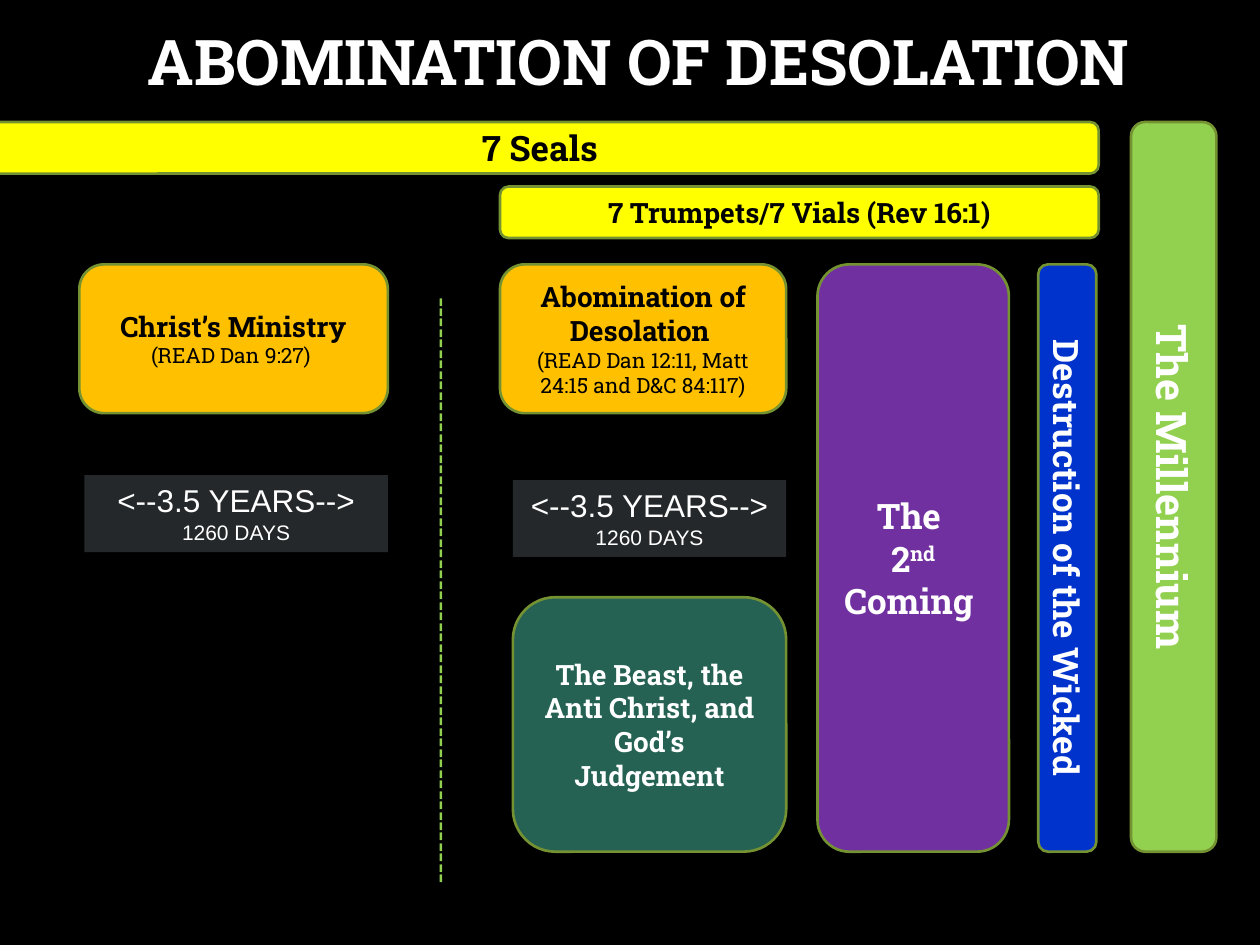
from dataclasses import dataclass
from lxml.etree import SubElement
from pptx import Presentation
from pptx.dml.color import RGBColor
from pptx.enum.shapes import MSO_SHAPE
from pptx.enum.text import MSO_ANCHOR, PP_ALIGN
from pptx.oxml.ns import qn
from pptx.util import Cm, Pt


@dataclass(frozen=True)
class Theme:
    slab: str = "Roboto Slab"
    sans: str = "Arial"
    black: str = "000000"
    white: str = "FFFFFF"
    yellow: str = "FFFF00"
    amber: str = "FFC000"
    lime: str = "92D050"
    violet: str = "7030A0"
    teal: str = "256253"
    blue: str = "0033CC"
    mist: str = "CCE0EE"
    edge: str = "759232"
    title: int = 36
    large: int = 24
    head: int = 20
    span: int = 18
    body: int = 16
    note: int = 12


T = Theme()
TITLE = "ABOMINATION OF DESOLATION"
RIGHT, ROW, FLOOR = 22.15, 5.33, 17.17
LATE, INNER, LATE_END = 10.08, 10.34, 15.85
BAR, CARD = 1.04, 3.0

# left, top, right, bottom, fill, ink, turned, runs (text, size, bold, raised)
BLOCKS = [
    (-0.38, 2.46, RIGHT, 2.46 + BAR, T.yellow, T.black, False,
     [("7 Seals", T.head, True, False)]),
    (LATE, 3.76, RIGHT, 3.76 + BAR, T.yellow, T.black, False,
     [("7 Trumpets/7 Vials (Rev 16:1)", T.body, True, False)]),
    (1.6, ROW, 7.82, ROW + CARD, T.amber, T.black, False,
     [("Christ’s Ministry ", T.body, True, False),
      ("(READ Dan 9:27) ", T.note, False, False)]),
    (LATE, ROW, LATE_END, ROW + CARD, T.amber, T.black, False,
     [("Abomination of Desolation \n", T.body, True, False),
      ("(READ Dan 12:11, Matt 24:15 and D&C 84:117)", T.note, False, False)]),
    (22.8, 2.46, 24.52, FLOOR, T.lime, T.white, True,
     [("The Millennium", T.large, True, False)]),
    (16.48, ROW, 20.34, FLOOR, T.violet, T.white, False,
     [("The \n2", T.head, True, False), ("nd", T.head, True, True),
      (" Coming ", T.head, True, False)]),
    (INNER, 12.04, LATE_END, FLOOR, T.teal, T.white, False,
     [("The Beast, the Anti Christ, and God’s Judgement", T.body, True, False)]),
    (20.93, ROW, 22.1, FLOOR, T.blue, T.white, True,
     [("Destruction of the Wicked", T.head, True, False)]),
]
SPANS = [(1.7, 9.58, 7.82, 11.13), (INNER, 9.68, LATE_END, 11.23)]
YEARS = [("<--3.5 YEARS-->", T.span), ("1260 DAYS", T.note)]
DIVIDE = (8.46, 4.8, 9.48, 19.02)


def frame(left, top, right, bottom, turned=False):
    wide, high = right - left, bottom - top
    if turned:
        left += (wide - high) / 2
        top += (high - wide) / 2
        wide, high = high, wide
    return [Cm(n) for n in (left, top, wide, high)]


def write(para, text, size, ink, font, bold=False, raised=False):
    para.alignment = PP_ALIGN.CENTER
    for i, part in enumerate(text.split("\n")):
        if i:
            para.add_line_break()
        if part:
            run = para.add_run()
            run.text = part
            run.font.name, run.font.size, run.font.bold = font, Pt(size), bold
            run.font.color.rgb = RGBColor.from_string(ink)
            if raised:
                run._r.get_or_add_rPr().set("baseline", "30000")


def panel(slide, kind, box, fill):
    shape = slide.shapes.add_shape(kind, *box)
    shape.shadow.inherit = False
    shape.fill.solid()
    shape.fill.fore_color.rgb = RGBColor.from_string(fill)
    shape.text_frame.word_wrap = True
    return shape


def block(slide, left, top, right, bottom, fill, ink, turned, runs):
    box = frame(left, top, right, bottom, turned)
    shape = panel(slide, MSO_SHAPE.ROUNDED_RECTANGLE, box, fill)
    shape.rotation = 90 if turned else 0
    shape.line.color.rgb = RGBColor.from_string(T.edge)
    shape.line.width = Pt(1.5)
    shape.text_frame.vertical_anchor = MSO_ANCHOR.MIDDLE
    for text, size, bold, raised in runs:
        write(shape.text_frame.paragraphs[0], text, size, ink, T.slab, bold, raised)


def span(slide, place):
    shape = panel(slide, MSO_SHAPE.RECTANGLE, frame(*place), T.mist)
    shape.line.fill.background()
    tint = shape._element.spPr.find(".//" + qn("a:srgbClr"))
    SubElement(tint, qn("a:alpha")).set("val", "18000")
    words = shape.text_frame
    words.vertical_anchor = MSO_ANCHOR.TOP
    for i, (text, size) in enumerate(YEARS):
        para = words.add_paragraph() if i else words.paragraphs[0]
        write(para, text, size, T.white, T.sans)


def main():
    deck = Presentation()
    deck.slide_width, deck.slide_height = Cm(25.4), Cm(19.05)
    slide = deck.slides.add_slide(deck.slide_layouts[5])
    slide.background.fill.solid()
    slide.background.fill.fore_color.rgb = RGBColor.from_string(T.black)

    title = slide.shapes.title
    title.left, title.top, title.width, title.height = frame(-0.03, 0.33, 25.78, 2.11)
    title.text_frame.vertical_anchor = MSO_ANCHOR.MIDDLE
    write(title.text_frame.paragraphs[0], TITLE, T.title, T.white, T.slab, True)

    for item in BLOCKS:
        block(slide, *item)
    for place in SPANS:
        span(slide, place)

    rule = slide.shapes.add_textbox(*frame(*DIVIDE, turned=True))
    rule.rotation = 90
    rule.text_frame.word_wrap = True
    write(rule.text_frame.paragraphs[0], "-" * 56, T.span, T.lime, T.sans)
    deck.save("out.pptx")


if __name__ == "__main__":
    main()
